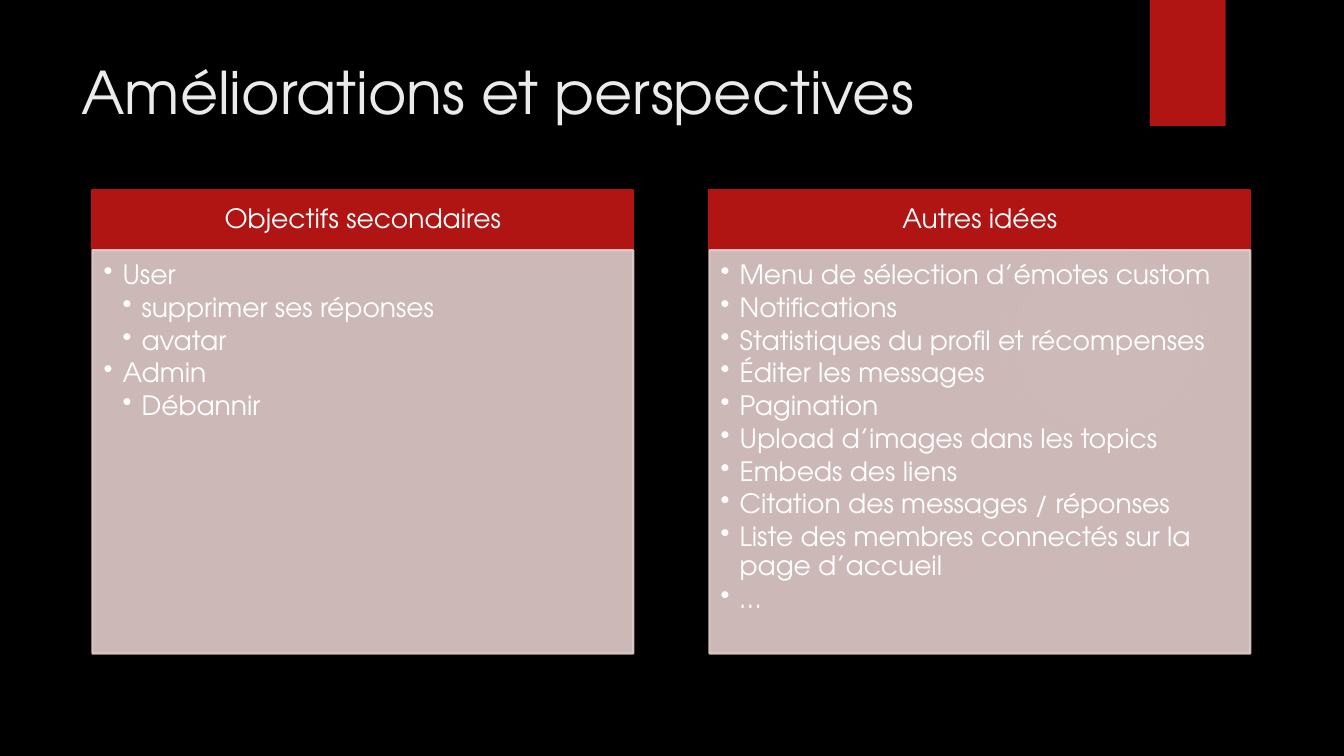
from dataclasses import dataclass

import pptx
import pptx.dml.color
import pptx.enum.shapes
import pptx.enum.text
import pptx.oxml
import pptx.oxml.ns
import pptx.util
from pptx.shapes.autoshape import Shape
from pptx.slide import Slide

COLUMNS, ROWS = 160, 90
CELL = pptx.util.Inches(1) / 12


@dataclass(frozen=True)
class Theme:
    font: str = "TeX Gyre Adventor"
    title_size: int = 42
    text_size: int = 19
    background: str = "000000"
    title: str = "EBEBEB"
    accent: str = "B01513"
    panel: str = "E4CCCC"
    panel_opacity: int = 90
    text: str = "FFFFFF"
    glow: str = "50B9C1"


@dataclass(frozen=True)
class Area:
    """A rectangle measured in grid columns and rows."""
    column: float
    row: float
    width: float
    height: float

    def lengths(self) -> list[pptx.util.Emu]:
        return [cells(n) for n in (self.column, self.row, self.width, self.height)]


@dataclass(frozen=True)
class Item:
    text: str
    level: int = 0


@dataclass(frozen=True)
class Card:
    heading: str
    items: tuple[Item, ...]


THEME = Theme()
TITLE_AREA = Area(8.5, 6, 123.5, 18.4)
TAB_AREA = Area(136.9, 0, 9, 15)
GLOW_AREA = Area(112.9, 22, 37, 37)
GLOW_STOPS = ((0, 7), (36, 6), (69, 0))
CARD_LEFT, CARD_TOP, CARD_WIDTH, CARD_PITCH = 11, 22.65, 64.4, 73.45
HEADING_HEIGHT, BODY_HEIGHT = 7.15, 48
HEADING_MARGINS = (1.8, 1, 1.8, 1)
BODY_MARGINS = (1.35, 1.35, 1.8, 2)
INDENT = 2.25

CARDS = (
    Card("Objectifs secondaires", (
        Item("User"),
        Item("supprimer ses réponses", 1),
        Item("avatar", 1),
        Item("Admin"),
        Item("Débannir", 1),
    )),
    Card("Autres idées", (
        Item("Menu de sélection d’émotes custom"),
        Item("Notifications"),
        Item("Statistiques du profil et récompenses"),
        Item("Éditer les messages"),
        Item("Pagination"),
        Item("Upload d’images dans les topics"),
        Item("Embeds des liens"),
        Item("Citation des messages / réponses"),
        Item("Liste des membres connectés sur la page d’accueil"),
        Item("…"),
    )),
)


def cells(count: float) -> pptx.util.Emu:
    return pptx.util.Emu(round(count * CELL))


def rgb(value: str) -> pptx.dml.color.RGBColor:
    return pptx.dml.color.RGBColor.from_string(value)


def set_opacity(shape: Shape, percent: int) -> None:
    """Apply one opacity to the solid fill and the outline."""
    for color in shape._element.spPr.iter(pptx.oxml.ns.qn("a:srgbClr")):
        alpha = pptx.oxml.parse_xml(f'<a:alpha {pptx.oxml.ns.nsdecls("a")} val="{percent * 1000}"/>')
        color.append(alpha)


def add_block(slide: Slide, area: Area, color: str, outlined: bool = True) -> Shape:
    shape = slide.shapes.add_shape(pptx.enum.shapes.MSO_SHAPE.RECTANGLE, *area.lengths())
    shape.shadow.inherit = False
    shape.fill.solid()
    shape.fill.fore_color.rgb = rgb(color)
    if outlined:
        shape.line.color.rgb = rgb(color)
        shape.line.width = pptx.util.Pt(1.5)
    else:
        shape.line.fill.background()
    return shape


def add_glow(slide: Slide) -> None:
    shape = slide.shapes.add_shape(pptx.enum.shapes.MSO_SHAPE.OVAL, *GLOW_AREA.lengths())
    shape.shadow.inherit = False
    shape.line.fill.background()
    stops = "".join(
        f'<a:gs pos="{position * 1000}"><a:srgbClr val="{THEME.glow}">'
        f'<a:alpha val="{opacity * 1000}"/></a:srgbClr></a:gs>'
        for position, opacity in GLOW_STOPS
    )
    gradient = pptx.oxml.parse_xml(
        f'<a:gradFill {pptx.oxml.ns.nsdecls("a")}><a:gsLst>{stops}</a:gsLst><a:path path="circle">'
        '<a:fillToRect l="50000" t="50000" r="50000" b="50000"/></a:path></a:gradFill>'
    )
    shape._element.spPr.find(pptx.oxml.ns.qn("a:prstGeom")).addnext(gradient)


def set_font(paragraph, size: int, color: str) -> None:
    paragraph.font.name = THEME.font
    paragraph.font.size = pptx.util.Pt(size)
    paragraph.font.color.rgb = rgb(color)


def set_frame(shape: Shape, margins: tuple[float, ...], anchor: pptx.enum.text.MSO_ANCHOR) -> None:
    frame = shape.text_frame
    frame.word_wrap = True
    frame.vertical_anchor = anchor
    frame.margin_left, frame.margin_top, frame.margin_right, frame.margin_bottom = map(cells, margins)


def add_bullet(paragraph, level: int) -> None:
    properties = paragraph._p.get_or_add_pPr()
    properties.set("marL", str(cells(INDENT * (level + 1))))
    properties.set("indent", str(-cells(INDENT)))
    properties.append(pptx.oxml.parse_xml(f'<a:buChar {pptx.oxml.ns.nsdecls("a")} char="•"/>'))


def add_title(slide: Slide, text: str) -> None:
    box = slide.shapes.add_textbox(*TITLE_AREA.lengths())
    box.text_frame.word_wrap = True
    paragraph = box.text_frame.paragraphs[0]
    paragraph.text = text
    set_font(paragraph, THEME.title_size, THEME.title)


def add_card(slide: Slide, card: Card, left: float) -> None:
    heading = add_block(slide, Area(left, CARD_TOP, CARD_WIDTH, HEADING_HEIGHT), THEME.accent)
    set_frame(heading, HEADING_MARGINS, pptx.enum.text.MSO_ANCHOR.MIDDLE)
    paragraph = heading.text_frame.paragraphs[0]
    paragraph.text = card.heading
    paragraph.alignment = pptx.enum.text.PP_ALIGN.CENTER
    paragraph.line_spacing = 0.9
    set_font(paragraph, THEME.text_size, THEME.text)

    body = add_block(slide, Area(left, CARD_TOP + HEADING_HEIGHT, CARD_WIDTH, BODY_HEIGHT), THEME.panel)
    set_opacity(body, THEME.panel_opacity)
    set_frame(body, BODY_MARGINS, pptx.enum.text.MSO_ANCHOR.TOP)
    for index, item in enumerate(card.items):
        frame = body.text_frame
        paragraph = frame.add_paragraph() if index else frame.paragraphs[0]
        paragraph.text = item.text
        paragraph.level = item.level
        paragraph.alignment = pptx.enum.text.PP_ALIGN.LEFT
        paragraph.line_spacing = 0.9
        paragraph.space_after = pptx.util.Pt(0.15 * THEME.text_size)
        add_bullet(paragraph, item.level)
        set_font(paragraph, THEME.text_size, THEME.text)


def main() -> None:
    presentation = pptx.Presentation()
    presentation.slide_width = cells(COLUMNS)
    presentation.slide_height = cells(ROWS)
    slide = presentation.slides.add_slide(presentation.slide_layouts[6])
    slide.background.fill.solid()
    slide.background.fill.fore_color.rgb = rgb(THEME.background)
    add_glow(slide)
    add_block(slide, TAB_AREA, THEME.accent, outlined=False)
    add_title(slide, "Améliorations et perspectives")
    for index, card in enumerate(CARDS):
        add_card(slide, card, CARD_LEFT + index * CARD_PITCH)
    presentation.save("out.pptx")


if __name__ == "__main__":
    main()
